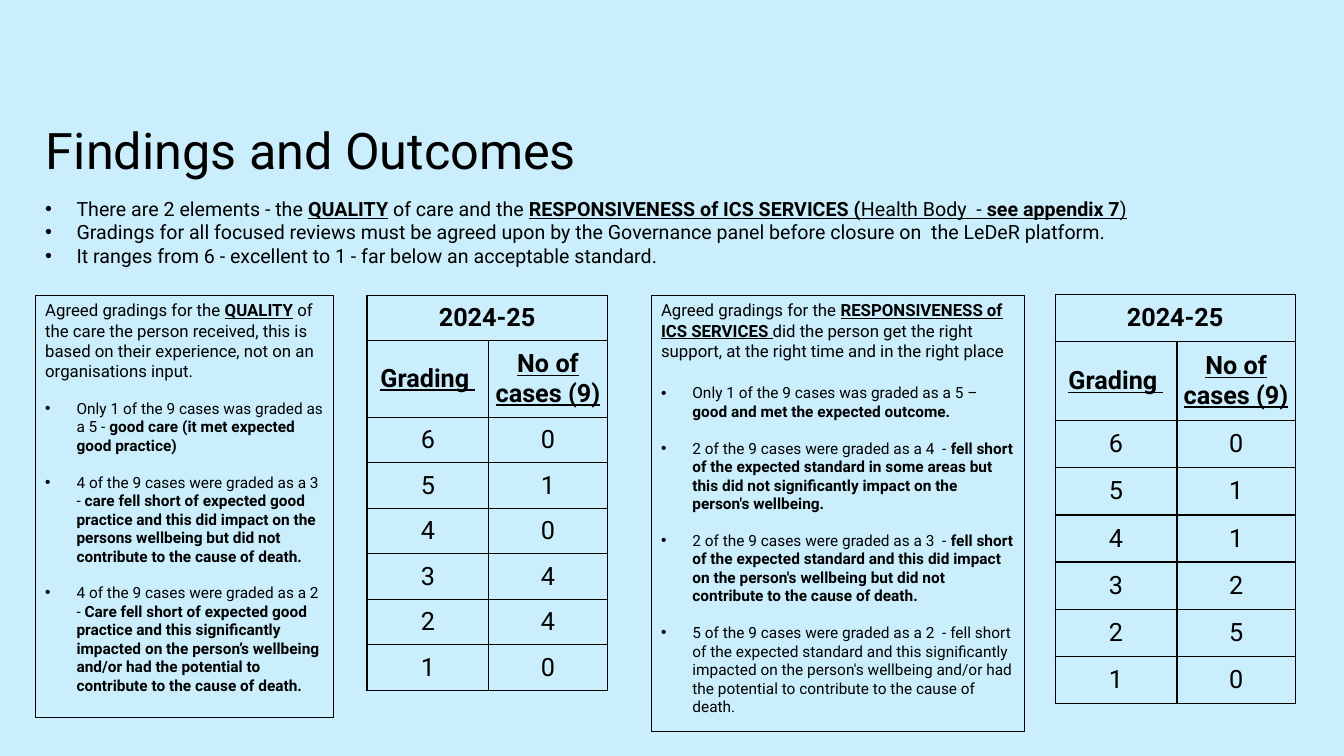
import pptx
import pptx.dml.color
import pptx.enum.shapes
import pptx.enum.text
import pptx.oxml
import pptx.oxml.ns
import pptx.util
from pptx.util import Cm

BLACK = pptx.dml.color.RGBColor(0x00, 0x00, 0x00)
PALE_BLUE = pptx.dml.color.RGBColor(0xCA, 0xEE, 0xFB)
FONT = "Roboto"
BULLET_INDENT = Cm(0.79)
HEADER_ROW_RATIO = 1.68

INTRO = [
    [("There are 2 elements - the ", ""), ("QUALITY", "bu"), (" of care and the ", ""),
     ("RESPONSIVENESS of ICS SERVICES (", "bu"), ("Health Body  - ", "u"),
     ("see appendix 7", "bu"), (")", "u")],
    [("Gradings for all focused reviews must be agreed upon by the Governance panel "
      "before closure on  the LeDeR platform.", "")],
    [("It ranges from 6 - excellent to 1 - far below an acceptable standard.", "")],
]

QUALITY_LEAD = [
    ("Agreed gradings for the ", ""), ("QUALITY", "bu"),
    (" of the care the person received, this is based on their experience, "
     "not on an organisations input.", ""),
]
QUALITY_FINDINGS = [
    [("Only 1 of the 9 cases was graded as a 5 - ", ""),
     ("good care (it met expected good practice)", "b")],
    [("4 of the 9 cases were graded as a 3 - ", ""),
     ("care fell short of expected good practice and this did impact on the persons "
      "wellbeing but did not contribute to the cause of death.", "b")],
    [("4 of the 9 cases were graded as a 2 - ", ""),
     ("Care fell short of expected good practice and this significantly impacted on the "
      "person’s wellbeing and/or had the potential to contribute to the cause of death.", "b")],
]

RESPONSIVENESS_LEAD = [
    ("Agreed gradings for the ", ""), ("RESPONSIVENESS of ICS SERVICES ", "bu"),
    ("did the person get the right support, at the right time and in the right place", ""),
]
RESPONSIVENESS_FINDINGS = [
    [("Only 1 of the 9 cases was graded as a 5 – ", ""),
     ("good and met the expected outcome.", "b")],
    [("2 of the 9 cases were graded as a 4  - ", ""),
     ("fell short of the expected standard in some areas but this did not significantly "
      "impact on the person's wellbeing.", "b")],
    [("2 of the 9 cases were graded as a 3  - ", ""),
     ("fell short of the expected standard and this did impact on the person's wellbeing "
      "but did not contribute to the cause of death.", "b")],
    [("5 of the 9 cases were graded as a 2  - fell short of the expected standard and this "
      "significantly impacted on the person's wellbeing and/or had the potential to "
      "contribute to the cause of death.", "")],
]

QUALITY_CASES = {6: 0, 5: 1, 4: 0, 3: 4, 2: 4, 1: 0}
RESPONSIVENESS_CASES = {6: 0, 5: 1, 4: 1, 3: 2, 2: 5, 1: 0}


def add_runs(paragraph, runs, size):
    """Append (text, style) runs, where b is bold and u is underlined."""
    for text, style in runs:
        run = paragraph.add_run()
        run.text = text
        run.font.name = FONT
        run.font.size = pptx.util.Pt(size)
        run.font.color.rgb = BLACK
        run.font.bold = "b" in style
        run.font.underline = "u" in style


def add_bullet(paragraph):
    """Give a paragraph a hanging round bullet."""
    properties = paragraph._p.get_or_add_pPr()
    properties.set("marL", str(BULLET_INDENT))
    properties.set("indent", str(-BULLET_INDENT))
    namespace = pptx.oxml.ns.nsdecls("a")
    for markup in (f'<a:buFont {namespace} typeface="Arial"/>',
                   f'<a:buChar {namespace} char="•"/>'):
        properties.append(pptx.oxml.parse_xml(markup))


def add_title(slide, left, top, width, height):
    """Place the slide title, centred vertically in its box."""
    frame = slide.shapes.add_textbox(left, top, width, height).text_frame
    frame.word_wrap = True
    frame.vertical_anchor = pptx.enum.text.MSO_ANCHOR.MIDDLE
    heading = frame.paragraphs[0]
    heading.line_spacing = 0.9
    add_runs(heading, [("Findings and Outcomes", "")], 36)


def add_intro(slide, left, top, width, height):
    """Place the introductory bullets."""
    frame = slide.shapes.add_textbox(left, top, width, height).text_frame
    frame.word_wrap = True
    for index, runs in enumerate(INTRO):
        point = frame.add_paragraph() if index else frame.paragraphs[0]
        add_bullet(point)
        add_runs(point, runs, 14)


def add_findings(slide, left, top, width, height, lead, findings, lead_gap):
    """Place an outlined panel with a lead sentence and spaced bullets."""
    panel = slide.shapes.add_shape(
        pptx.enum.shapes.MSO_SHAPE.RECTANGLE, left, top, width, height)
    panel.shadow.inherit = False
    panel.fill.background()
    panel.line.color.rgb = BLACK
    panel.line.width = pptx.util.Pt(0.75)
    frame = panel.text_frame
    frame.word_wrap = True
    frame.vertical_anchor = pptx.enum.text.MSO_ANCHOR.TOP
    frame.paragraphs[0].alignment = pptx.enum.text.PP_ALIGN.LEFT
    add_runs(frame.paragraphs[0], lead, 12)
    for index, runs in enumerate(findings):
        finding = frame.add_paragraph()
        finding.alignment = pptx.enum.text.PP_ALIGN.LEFT
        finding.space_before = pptx.util.Pt(13 if index else lead_gap)
        add_bullet(finding)
        add_runs(finding, runs, 11)


def format_cell(cell, text, style):
    """Fill in one centred cell with a thin black border all round."""
    cell.margin_left = cell.margin_right = cell.margin_top = cell.margin_bottom = 0
    cell.vertical_anchor = pptx.enum.text.MSO_ANCHOR.MIDDLE
    for side in ("lnL", "lnR", "lnT", "lnB"):
        cell._tc.get_or_add_tcPr().append(pptx.oxml.parse_xml(
            f'<a:{side} {pptx.oxml.ns.nsdecls("a")} w="12700"><a:solidFill>'
            f'<a:srgbClr val="{BLACK}"/></a:solidFill></a:{side}>'))
    cell.fill.background()
    if text:
        paragraph = cell.text_frame.paragraphs[0]
        paragraph.alignment = pptx.enum.text.PP_ALIGN.CENTER
        add_runs(paragraph, [(text, style)], 18)


def add_gradings(slide, left, top, width, height, cases):
    """Place a table of case counts per grading."""
    rows = [("2024-25", ""), ("Grading ", "No of cases (9)")]
    rows += [(str(grading), str(count)) for grading, count in cases.items()]
    table = slide.shapes.add_table(len(rows), 2, left, top, width, height).table
    table.first_row = table.horz_banding = False
    table.columns[0].width = Cm(3.07)
    table.columns[1].width = width - Cm(3.07)
    row_height = int(height / (len(rows) - 1 + HEADER_ROW_RATIO))
    for row_index, texts in enumerate(rows):
        is_header = row_index == 1
        table.rows[row_index].height = int(row_height * (HEADER_ROW_RATIO if is_header else 1))
        style = ("b", "bu")[row_index] if row_index < 2 else ""
        for column_index, text in enumerate(texts):
            format_cell(table.cell(row_index, column_index), text, style)
    table.cell(0, 0).merge(table.cell(0, 1))


def main():
    """Build the slide and save it."""
    presentation = pptx.Presentation()
    presentation.slide_width = Cm(33.87)
    presentation.slide_height = Cm(19.05)
    slide = presentation.slides.add_slide(presentation.slide_layouts[6])
    slide.background.fill.solid()
    slide.background.fill.fore_color.rgb = PALE_BLUE
    add_title(slide, Cm(0.91), Cm(2.03), Cm(29.21), Cm(3.68))
    add_intro(slide, Cm(0.89), Cm(4.83), Cm(31.75), Cm(2.08))
    add_findings(slide, Cm(0.89), Cm(7.44), Cm(7.52), Cm(10.64),
                 QUALITY_LEAD, QUALITY_FINDINGS, 13)
    add_gradings(slide, Cm(9.25), Cm(7.44), Cm(6.05), Cm(9.96), QUALITY_CASES)
    add_findings(slide, Cm(16.41), Cm(7.44), Cm(9.4), Cm(11),
                 RESPONSIVENESS_LEAD, RESPONSIVENESS_FINDINGS, 16.4)
    add_gradings(slide, Cm(26.59), Cm(7.42), Cm(6.05), Cm(10.31), RESPONSIVENESS_CASES)
    presentation.save("out.pptx")


if __name__ == "__main__":
    main()
